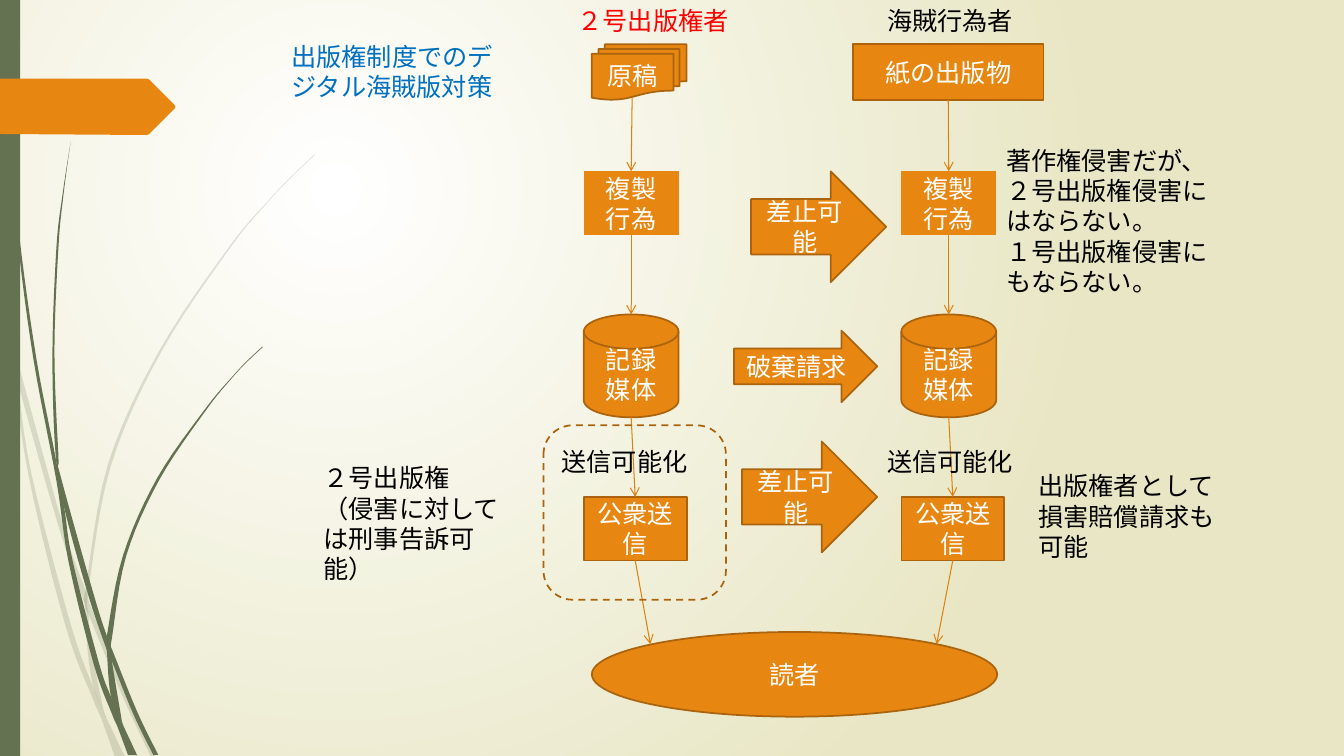
from lxml import etree
from pptx import Presentation
from pptx import util as u
from pptx.dml.color import RGBColor
from pptx.enum import dml, shapes, text
from pptx.oxml.ns import qn

SCALE = 9144  # EMU in one px, 100 px to the inch
COLORS = {
    "orange": "E78712", "edge": "AB640D", "arrow": "DD8111", "green": "647252",
    "cream": "E8E6C4", "white": "FFFFFF", "black": "000000",
    "blue": "0070C0", "red": "FF0000",
}
FONT = {"name": "League Spartan", "size": u.Pt(18)}
SHAPE_FRAME = {"word_wrap": True, "vertical_anchor": text.MSO_ANCHOR.MIDDLE}
BOX_FRAME = {"word_wrap": True, "auto_size": text.MSO_AUTO_SIZE.SHAPE_TO_FIT_TEXT}
KIND = shapes.MSO_SHAPE

# Each wisp is its left edge, then its right edge, in px
PALE_WISPS = [
    ([(0, 299), (10, 344), (28, 470), (65, 621), (92, 693), (101, 714), (114, 751)],
     [(124, 751), (105, 711), (93, 683), (70, 619), (31, 469), (17, 376), (11, 350),
      (9, 322), (0, 282)]),
    ([(14, 345), (17, 376), (58, 522), (84, 599), (88, 610), (123, 694), (150, 751)],
     [(155, 751), (127, 692), (92, 607), (85, 586), (62, 520), (14, 345)]),
    ([(312, 153), (289, 175), (268, 197), (228, 244), (158, 348), (107, 461), (85, 584),
      (84, 599), (87, 646), (93, 683), (105, 711)],
     [(103, 706), (91, 646), (88, 610), (88, 584), (110, 462), (160, 349), (229, 245),
      (268, 198), (290, 175), (312, 154)]),
]
DARK_WISPS = [
    ([(3, 0), (4, 48), (7, 110), (17, 233), (33, 355), (56, 477), (68, 557), (93, 659),
      (111, 708), (117, 722), (127, 749)],
     [(136, 749), (122, 719), (110, 691), (98, 657), (72, 556), (64, 505), (55, 453),
      (36, 355), (19, 232), (8, 109), (5, 48), (4, 0)]),
    ([(70, 141), (62, 193), (56, 245), (52, 349), (55, 449), (64, 505), (88, 592),
      (106, 645), (111, 656), (132, 708), (152, 749)],
     [(157, 749), (136, 706), (113, 649), (106, 631), (93, 590), (60, 472), (58, 453),
      (54, 349), (58, 245), (63, 193), (70, 141)]),
    ([(260, 344), (245, 358), (231, 373), (204, 405), (156, 474), (122, 551), (106, 631),
      (106, 645), (110, 691), (122, 719)],
     [(121, 716), (111, 656), (110, 641), (111, 633), (125, 552), (158, 476), (205, 406),
      (231, 374), (245, 359), (261, 344)]),
]
BANNER = [(0, 78), (146, 78), (148, 79), (173, 104), (174, 106), (173, 108),
          (148, 133), (146, 134), (0, 133)]
ARROWS = [
    ("差止可能", (745, 170, 134, 110)),
    ("破棄請求", (728, 328, 142, 71)),
    ("差止可能", (736, 438, 134, 110)),
]
NOTES = [
    (["出版権制度でのデジタル海賊版対策"], (279, 36, 228, 71), "blue"),
    (["２号出版権者"], (563, 0, 213, 40), "red"),
    (["海賊行為者"], (870, 0, 181, 40), "black"),
    (["著作権侵害だが、", "２号出版権侵害にはならない。", "１号出版権侵害にもならない。"],
     (988, 139, 236, 162), "black"),
    (["送信可能化"], (547, 438, 157, 40), "black"),
    (["送信可能化"], (870, 438, 165, 40), "black"),
    (["２号出版権", "（侵害に対しては刑事告訴可能）"], (311, 454, 213, 131), "black"),
    (["出版権者として損害賠償請求も可能"], (1020, 462, 197, 131), "black"),
]


def color(name):
    return RGBColor.from_string(COLORS[name])


def emu(lengths):
    return [u.Emu(round(length * SCALE)) for length in lengths]


def set_values(target, values):
    for name, value in values.items():
        setattr(target, name, value)


def write(frame, lines, ink, align=None):
    for index, line in enumerate(lines):
        para = frame.paragraphs[0] if index == 0 else frame.add_paragraph()
        para.alignment = align
        span = para.add_run()
        span.text = line
        set_values(span.font, FONT)
        span.font.color.rgb = color(ink)


def paint(shape, fill, edge=None):
    shape.shadow.inherit = False
    if fill:
        shape.fill.solid()
        shape.fill.fore_color.rgb = color(fill)
    else:
        shape.fill.background()
    if edge:
        shape.line.color.rgb = color(edge)
        shape.line.width = u.Pt(1.25)
    else:
        shape.line.fill.background()


def add_block(page, kind, place, label="", fill="orange", edge="edge"):
    shape = page.shapes.add_shape(kind, *emu(place))
    paint(shape, fill, edge)
    if label:
        set_values(shape.text_frame, SHAPE_FRAME)
        write(shape.text_frame, [label], "white", text.PP_ALIGN.CENTER)
    return shape


def add_note(page, lines, place, ink):
    box = page.shapes.add_textbox(*emu(place))
    set_values(box.text_frame, BOX_FRAME)
    write(box.text_frame, lines, ink)


def add_flow(page, start, end, source=None, target=None):
    """Arrow from start to end; source is joined at its bottom, target at its top."""
    flow = page.shapes.add_connector(shapes.MSO_CONNECTOR.STRAIGHT, *emu(start + end))
    if source is not None:
        flow.begin_connect(source, 2)
    if target is not None:
        flow.end_connect(target, 0)
    flow.line.color.rgb = color("arrow")
    flow.line.width = u.Pt(0.75)
    etree.SubElement(flow.line._get_or_add_ln(), qn("a:tailEnd"), type="arrow")
    etree.SubElement(flow.element.spPr, qn("a:effectLst"))


def smooth(knots, steps=6):
    """Points on a Catmull-Rom curve through the knots."""
    padded = [knots[0], *knots, knots[-1]]
    points = [knots[0]]
    for a, b, c, d in zip(padded, padded[1:], padded[2:], padded[3:]):
        for step in range(1, steps + 1):
            t = step / steps
            points.append(tuple(
                (2 * q + (r - p) * t + (2 * p - 5 * q + 4 * r - s) * t ** 2
                 + (3 * q - p - 3 * r + s) * t ** 3) / 2
                for p, q, r, s in zip(a, b, c, d)))
    return points


def add_outline(page, points, fill, alpha=None):
    corners = [emu(point) for point in points]
    builder = page.shapes.build_freeform(*corners[0])
    builder.add_line_segments(corners[1:], close=True)
    shape = builder.convert_to_shape()
    paint(shape, fill)
    if alpha:
        tint = shape.element.spPr.find(".//" + qn("a:srgbClr"))
        etree.SubElement(tint, qn("a:alpha"), val=str(alpha * 1000))


def set_background(page):
    fill = page.background.fill
    fill.gradient()
    for stop, name in zip(fill.gradient_stops, ("white", "cream")):
        stop.color.rgb = color(name)
    linear = page.element.find(".//" + qn("a:lin"))
    circle = etree.Element(qn("a:path"), path="circle")
    etree.SubElement(circle, qn("a:fillToRect"), l="50000", t="50000", r="100000", b="100000")
    linear.getparent().replace(linear, circle)


def add_decoration(page):
    for wisps, alpha in ((PALE_WISPS, 20), (DARK_WISPS, None)):
        for left, right in wisps:
            add_outline(page, smooth(left) + smooth(right), "green", alpha)
    add_block(page, KIND.RECTANGLE, (0, 0, 20, 750), fill="green", edge=None)
    add_outline(page, BANNER, "orange")


def add_column(page, left, start, reader, source=None):
    """Copying, storage and sending, from the work at start down to the reader."""
    middle = left + 47
    copying = add_block(page, KIND.FLOWCHART_PROCESS, (left, 170, 94, 63), "複製行為", edge=None)
    add_block(page, KIND.FLOWCHART_MAGNETIC_DISK, (left, 312, 94, 102), "記録媒体")
    sending = add_block(page, KIND.FLOWCHART_PROCESS, (left, 493, 102, 63), "公衆送信")
    add_flow(page, start, (middle, 170), source, copying)
    add_flow(page, (middle, 233), (middle, 312), copying)
    add_flow(page, (middle, 414), (left + 51, 493), target=sending)
    add_flow(page, (left + 51, 556), reader, sending)


def main():
    deck = Presentation()
    deck.slide_width, deck.slide_height = emu((1333, 750))
    page = deck.slides.add_slide(deck.slide_layouts[6])
    set_background(page)
    add_decoration(page)
    add_block(page, KIND.FLOWCHART_MULTIDOCUMENT, (587, 44, 94, 55), "原稿")
    printed = add_block(page, KIND.RECTANGLE, (846, 44, 189, 55), "紙の出版物")
    add_block(page, KIND.OVAL, (587, 627, 402, 84), "読者")
    add_column(page, 579, (627, 97), (645, 639))
    add_column(page, 894, (941, 99), (929, 639), printed)
    scope = add_block(page, KIND.ROUNDED_RECTANGLE, (539, 422, 181, 173), fill=None)
    scope.line.dash_style = dml.MSO_LINE.DASH
    for label, place in ARROWS:
        add_block(page, KIND.RIGHT_ARROW, place, label)
    for lines, place, ink in NOTES:
        add_note(page, lines, place, ink)
    deck.save("out.pptx")


if __name__ == "__main__":
    main()
